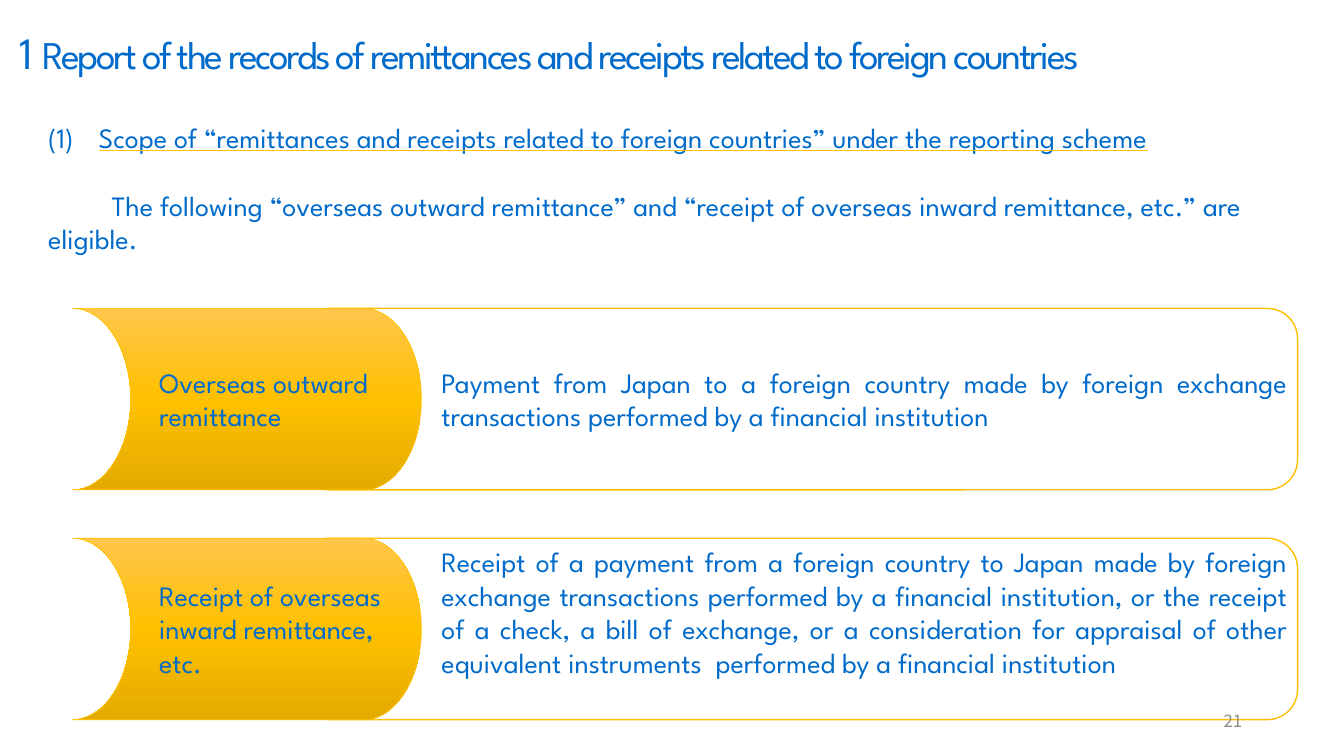
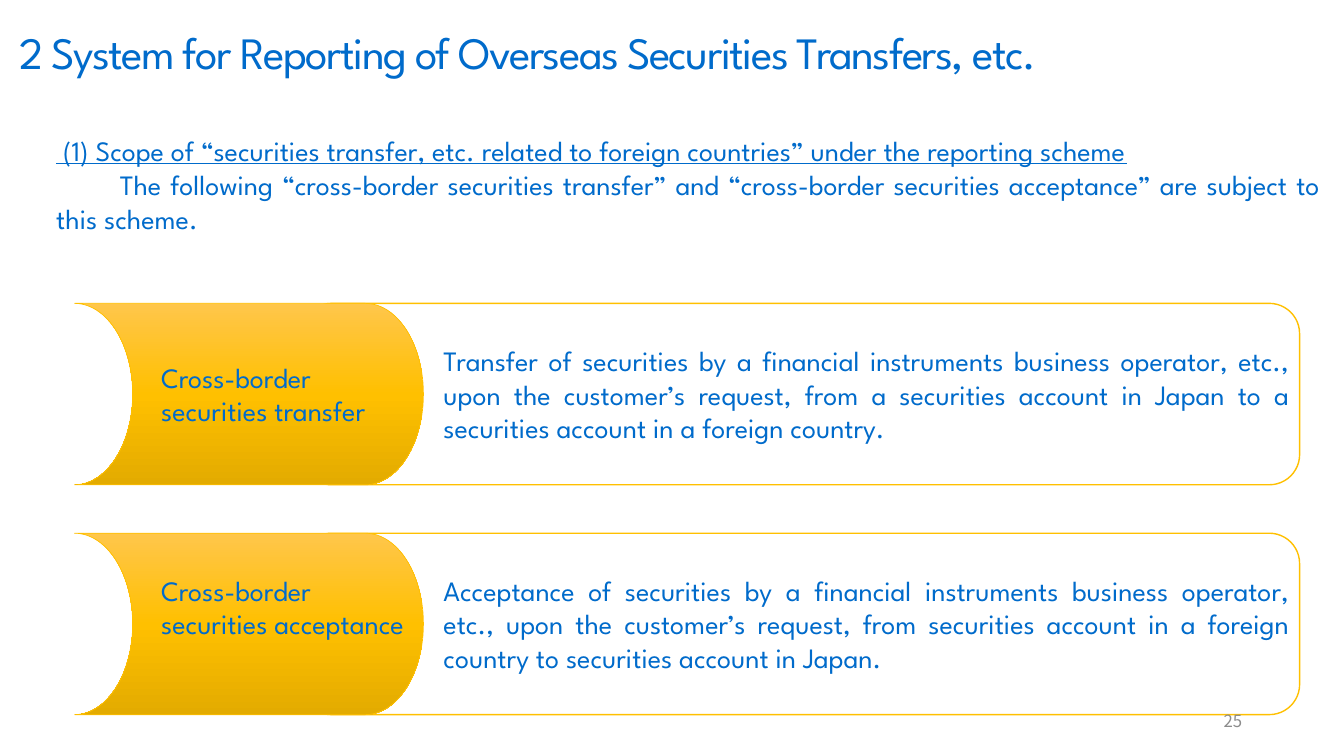
import copy

import pptx
import pptx.dml.color
import pptx.enum.shapes
import pptx.enum.text
import pptx.oxml
import pptx.oxml.ns
import pptx.util
from pptx.util import Inches

# Shared look
BLUE = pptx.dml.color.RGBColor(0x00, 0x6B, 0xCB)
GREY = pptx.dml.color.RGBColor(0x8C, 0x8C, 0x8C)
GOLD = pptx.dml.color.RGBColor(0xFF, 0xC0, 0x00)
LIGHT_GOLD = pptx.dml.color.RGBColor(0xFF, 0xC6, 0x4B)
DARK_GOLD = pptx.dml.color.RGBColor(0xE3, 0xAB, 0x00)
BODY_FONT = "League Spartan"
NUMBER_FONT = "Noto Sans CJK JP"
BODY_SIZE = 20

# Row geometry in inches
ROW_HEIGHT = 1.8
ROW_PITCH = 2.28
LINE_HEIGHT = 0.335

SHAPES = pptx.enum.shapes.MSO_SHAPE
ALIGN = pptx.enum.text.PP_ALIGN
ANCHOR = pptx.enum.text.MSO_ANCHOR


def style_run(run, size=BODY_SIZE, font=BODY_FONT, color=BLUE, spacing=None):
    run.font.size = pptx.util.Pt(size)
    run.font.name = font
    run.font.color.rgb = color
    if spacing is not None:
        run.font._element.set("spc", str(round(spacing * 100)))


def add_text(slide, left, top, width, height, text, align=ALIGN.LEFT, wrap=True, **style):
    box = slide.shapes.add_textbox(Inches(left), Inches(top), Inches(width), Inches(height))
    frame = box.text_frame
    frame.word_wrap = wrap
    frame.text = text
    for paragraph in frame.paragraphs:
        paragraph.alignment = align
        for run in paragraph.runs:
            style_run(run, **style)
    return frame


def add_title(slide, parts):
    """Each part is (text, size, letter spacing)."""
    first, *others = parts
    frame = add_text(slide, 0.09, 0.2, 12.45, 0.64, first[0], wrap=False,
                     size=first[1], spacing=first[2])
    for text, size, spacing in others:
        run = frame.paragraphs[0].add_run()
        run.text = text
        style_run(run, size=size, spacing=spacing)


def indent(paragraph, margin, first_line):
    properties = paragraph._p.get_or_add_pPr()
    properties.set("marL", str(Inches(margin)))
    properties.set("indent", str(Inches(first_line)))
    return properties


def add_intro(slide, left, top, height, heading, sentence, numbered=False,
              gap=0, align=ALIGN.LEFT):
    frame = add_text(slide, left, top, 12.74, height, heading + "\n" + sentence)
    scope, explanation = frame.paragraphs

    # Underlined heading, numbered "(1)" with a gold underline if asked for
    properties = indent(scope, 0.5, -0.5)
    scope.runs[0].font.underline = True
    if numbered:
        properties.append(pptx.oxml.parse_xml(
            f'<a:buAutoNum {pptx.oxml.ns.nsdecls("a")} type="arabicParenBoth"/>'))
        underline = pptx.oxml.parse_xml(
            f'<a:uFill {pptx.oxml.ns.nsdecls("a")}><a:solidFill>'
            f'<a:srgbClr val="{GOLD}"/></a:solidFill></a:uFill>')
        scope.runs[0].font._element.find(pptx.oxml.ns.qn("a:latin")).addprevious(underline)

    # Explanation with a first-line indent
    indent(explanation, 0, 0.63)
    explanation.space_before = pptx.util.Pt(gap)
    explanation.alignment = align


def add_outlined(slide, preset, left, top, width, line_width):
    shape = slide.shapes.add_shape(preset, Inches(left), Inches(top),
                                   Inches(width), Inches(ROW_HEIGHT))
    shape.shadow.inherit = False
    shape.line.color.rgb = GOLD
    shape.line.width = pptx.util.Pt(line_width)
    return shape


def add_tab(slide, left, top):
    tab = add_outlined(slide, SHAPES.FLOWCHART_STORED_DATA, left, top, 3.46, 0.5)
    properties = tab._element.spPr
    properties.xfrm.set("flipH", "1")
    tab.fill.gradient()
    tab.fill.gradient_angle = 270
    stop_list = properties.find(".//" + pptx.oxml.ns.qn("a:gsLst"))
    stop_list.append(copy.deepcopy(stop_list[0]))
    colors = (LIGHT_GOLD, GOLD, DARK_GOLD)
    for index, (stop, color) in enumerate(zip(tab.fill.gradient_stops, colors)):
        stop.position = index / 2
        stop.color.rgb = color


def add_row_text(slide, left, row_top, width, text, lines, align=ALIGN.LEFT):
    """Centre a box with room for the given number of lines in its row."""
    height = 0.1 + lines * LINE_HEIGHT
    add_text(slide, left, row_top + (ROW_HEIGHT - height) / 2, width, height, text, align)


def add_rows(slide, left, top, rows):
    """Each row is (label, label lines, description, description lines)."""
    for index, (label, label_lines, description, description_lines) in enumerate(rows):
        row_top = top + index * ROW_PITCH
        panel = add_outlined(slide, SHAPES.ROUNDED_RECTANGLE, left + 2.25, row_top, 9.9, 1)
        panel.fill.background()
        add_tab(slide, left, row_top)
        add_row_text(slide, left + 0.76, row_top, 2.71, label, label_lines)
        add_row_text(slide, left + 3.56, row_top, 8.59, description,
                     description_lines, ALIGN.JUSTIFY)


def add_page_number(slide, number):
    frame = add_text(slide, 9.42, 6.95, 3, 0.4, str(number), ALIGN.RIGHT,
                     size=12, font=NUMBER_FONT, color=GREY)
    frame.vertical_anchor = ANCHOR.MIDDLE


def build_remittances(slide):
    add_title(slide, [
        ("1 ", 32, -1.1),
        ("Report of the records of remittances and receipts related to foreign countries",
         28, -1.7),
    ])
    add_intro(
        slide, 0.38, 1.15, 1.78,
        "Scope of “remittances and receipts related to foreign countries” "
        "under the reporting scheme",
        "The following “overseas outward remittance” and “receipt of overseas "
        "inward remittance, etc.” are eligible.",
        numbered=True, gap=24)
    add_rows(slide, 0.72, 3.06, [
        ("Overseas outward remittance", 2,
         "Payment from Japan to a foreign country made by foreign exchange "
         "transactions performed by a financial institution", 2),
        ("Receipt of overseas inward remittance, etc.", 3,
         "Receipt of a payment from a foreign country to Japan made by foreign "
         "exchange transactions performed by a financial institution, or the "
         "receipt of a check, a bill of exchange, or a consideration for appraisal "
         "of other equivalent instruments  performed by a financial institution", 5),
    ])
    add_page_number(slide, 21)


def build_securities(slide):
    add_title(slide, [
        ("2 System for Reporting of Overseas Securities Transfers, etc.", 32, -1.1),
    ])
    add_intro(
        slide, 0.46, 1.28, 1.45,
        " (1) Scope of “securities transfer, etc. related to foreign countries” "
        "under the reporting scheme",
        "The following “cross-border securities transfer” and “cross-border "
        "securities acceptance” are subject to this scheme.",
        align=ALIGN.JUSTIFY)
    add_rows(slide, 0.74, 3.01, [
        ("Cross-border securities transfer", 2,
         "Transfer of securities by a financial instruments business operator, "
         "etc., upon the customer’s request, from a securities account in Japan "
         "to a securities account in a foreign country.", 3),
        ("Cross-border securities acceptance", 3,
         "Acceptance of securities by a financial instruments business operator, "
         "etc., upon the customer’s request, from securities account in a foreign "
         "country to securities account in Japan.", 3),
    ])
    add_page_number(slide, 25)


def main():
    deck = pptx.Presentation()
    deck.slide_width = Inches(13.33)
    deck.slide_height = Inches(7.5)
    blank = deck.slide_layouts[6]
    for build in (build_remittances, build_securities):
        build(deck.slides.add_slide(blank))
    deck.save("out.pptx")


if __name__ == "__main__":
    main()
